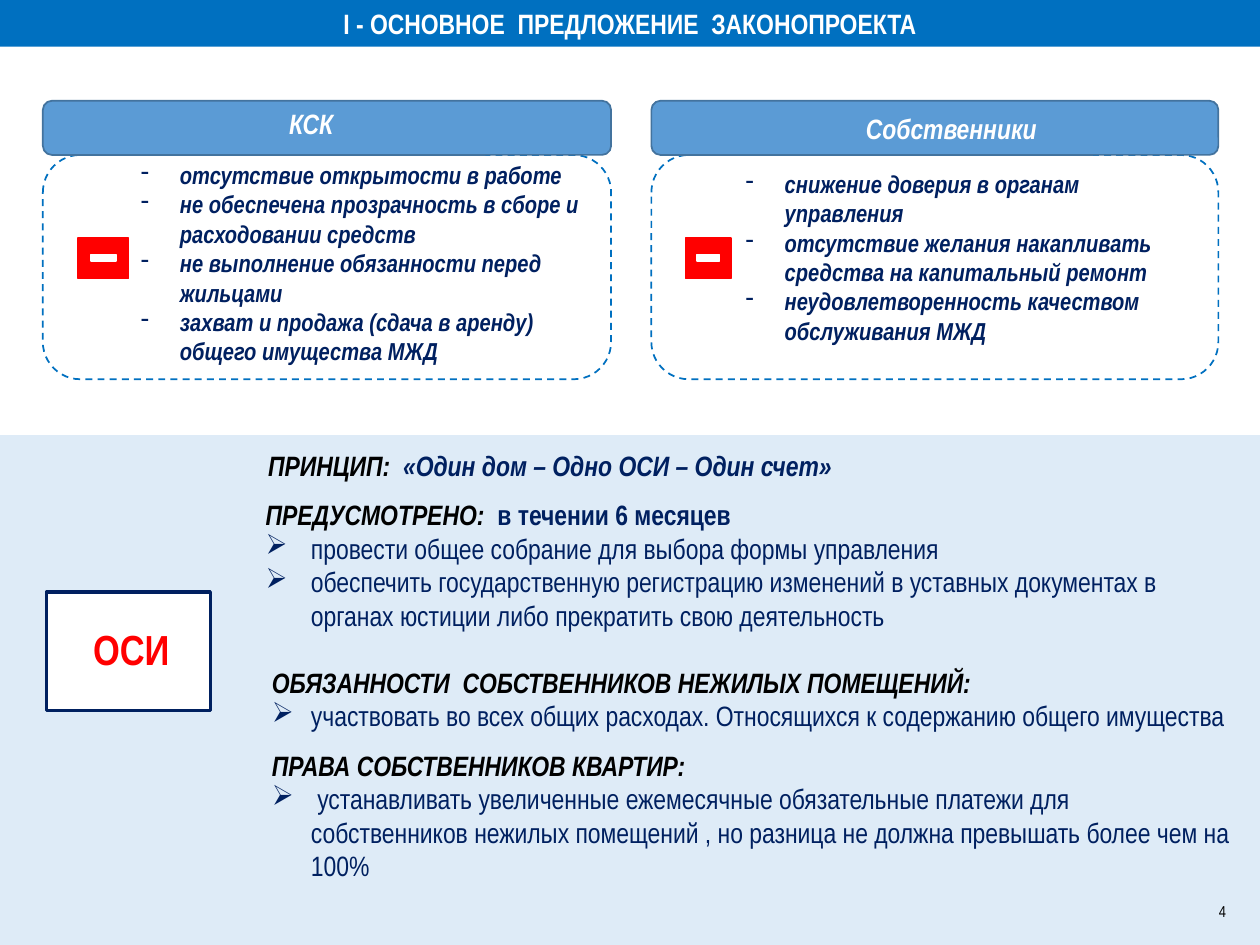
import pptx
import pptx.util
import pptx.dml.color
import pptx.enum.dml
import pptx.enum.shapes
import pptx.enum.text
from lxml import etree

Inches, Pt = pptx.util.Inches, pptx.util.Pt
KIND = pptx.enum.shapes.MSO_SHAPE
ALIGN = pptx.enum.text.PP_ALIGN
HUES = {"blue": "0070C0", "navy": "002060", "pale": "DEEBF7", "head": "5B9BD5",
        "edge": "43739E", "red": "FF0000", "white": "FFFFFF", "black": "000000"}
RGB = {name: pptx.dml.color.RGBColor.from_string(hue) for name, hue in HUES.items()}


def draw(home, kind, box, fill, line=None, width=1):
    """Add a filled shape; no line colour means no outline."""
    shape = home.add_shape(kind, *map(Inches, box))
    shape.shadow.inherit = False
    shape.fill.solid()
    shape.fill.fore_color.rgb = RGB[fill]
    if line:
        shape.line.color.rgb = RGB[line]
        shape.line.width = Pt(width)
    else:
        shape.line.fill.background()
    return shape


def write(frame, paras, align=ALIGN.LEFT):
    """Each paragraph is (runs, bullet, indent, space before)."""
    frame.word_wrap = True
    for n, (runs, mark, indent, gap) in enumerate(paras):
        para = frame.add_paragraph() if n else frame.paragraphs[0]
        para.alignment = align
        para.space_before = Pt(gap)
        if mark:
            props = para._p.get_or_add_pPr()
            props.set("marL", str(Inches(indent)))
            props.set("indent", str(-Inches(indent)))
            bullet = etree.SubElement(props, pptx.oxml.ns.qn("a:buChar"))
            bullet.set("char", mark)
        for text, size, hue, style in runs:
            for row, part in enumerate(text.split("\n")):
                if row:
                    para.add_line_break()
                run = para.add_run()
                run.text = part
                run.font.name = "Arial Narrow"
                run.font.size = Pt(size)
                run.font.color.rgb = RGB[hue]
                run.font.bold = "b" in style
                run.font.italic = "i" in style


deck = pptx.Presentation()
deck.slide_width, deck.slide_height = Inches(10), Inches(7.5)
slide = deck.slides.add_slide(deck.slide_layouts[5])
shapes = slide.shapes

# Title bar
title = shapes.title
title.left, title.top, title.width, title.height = map(Inches, (0, 0, 10, 0.37))
title.fill.solid()
title.fill.fore_color.rgb = RGB["blue"]
title.text_frame.auto_size = pptx.enum.text.MSO_AUTO_SIZE.NONE
write(title.text_frame,
      [([("I - ОСНОВНОЕ  ПРЕДЛОЖЕНИЕ  ЗАКОНОПРОЕКТА", 16, "white", "b")], "", 0, 0)],
      ALIGN.CENTER)

# Lower panel and page number
draw(shapes, KIND.RECTANGLE, (0, 3.46, 10, 4.04), "pale", "pale")
page = draw(shapes, KIND.RECTANGLE, (9.48, 7.03, 0.32, 0.4), "pale").text_frame
page.margin_left = page.margin_right = Inches(0.07)
page.margin_top = page.margin_bottom = Inches(0.04)
write(page, [([("4", 9, "black", "")], "", 0, 0)], ALIGN.RIGHT)

# Two problem cards: left, width, heading box, sign left and width, list box, items
cards = [
    (0.34, 4.51, "КСК", (0.78, 0.8, 3.38, 0.37), 0.62, 0.4, (1.02, 1.22, 3.76, 1.75),
     ["отсутствие открытости в работе",
      "не обеспечена прозрачность в сборе и расходовании средств",
      "не выполнение обязанности перед жильцами",
      "захват и продажа (сдача в аренду) общего имущества МЖД"]),
    (5.17, 4.5, "Собственники", (5.86, 0.84, 3.38, 0.37), 5.44, 0.36, (5.82, 1.29, 3.5, 1.51),
     ["снижение доверия в органам управления",
      "отсутствие желания накапливать средства на капитальный ремонт",
      "неудовлетворенность качеством обслуживания МЖД"]),
]
for left, wide, name, label, spot, span, area, items in cards:
    body = draw(shapes, KIND.ROUNDED_RECTANGLE, (left, 1.23, wide, 1.78), "white", "blue")
    body.line.dash_style = pptx.enum.dml.MSO_LINE.DASH
    draw(shapes, KIND.ROUNDED_RECTANGLE, (left, 0.8, wide, 0.43), "head", "edge")
    head = shapes.add_textbox(*map(Inches, label))
    write(head.text_frame, [([(name, 16, "white", "bi")], "", 0, 0)], ALIGN.CENTER)

    # Minus sign
    sign = shapes.add_group_shape().shapes
    draw(sign, KIND.RECTANGLE, (spot, 1.89, span, 0.32), "red", "red")
    draw(sign, KIND.RECTANGLE, (spot + span / 4, 2.02, span / 2, 0.05), "white", "white")

    points = shapes.add_textbox(*map(Inches, area))
    write(points.text_frame,
          [([(item, 14, "navy", "bi")], "-", 0.31, 0) for item in items])

# Framed label
draw(shapes, KIND.RECTANGLE, (0.37, 4.7, 1.3, 0.94), "white", "navy", 2)
label = shapes.add_textbox(*map(Inches, (0.64, 4.9, 0.83, 0.5)))
write(label.text_frame, [([("ОСИ", 24, "red", "b")], "", 0, 0)])

# Principle, terms, duties and rights
texts = [
    ((2.03, 3.51, 5.98, 0.37), [
        ([("ПРИНЦИП:  ", 16, "black", "bi"),
          ("«Один дом – Одно ОСИ – Один счет»", 16, "navy", "bi")], "", 0, 0)]),
    ((2.01, 3.9, 8.05, 1.45), [
        ([("ПРЕДУСМОТРЕНО:  ", 16, "black", "bi"),
          ("в течении 6 месяцев", 16, "navy", "b")], "", 0, 0),
        ([("провести общее собрание для выбора формы управления", 16, "navy", "")],
         "➢", 0.36, 0),
        ([("обеспечить государственную регистрацию изменений в уставных документах в\n"
           "органах юстиции либо прекратить свою деятельность", 16, "navy", "")],
         "➢", 0.36, 0)]),
    ((2.06, 5.23, 7.82, 2.12), [
        ([("ОБЯЗАННОСТИ  СОБСТВЕННИКОВ НЕЖИЛЫХ ПОМЕЩЕНИЙ:", 16, "black", "bi")], "", 0, 0),
        ([("участвовать во всех общих расходах. Относящихся к содержанию общего имущества",
           16, "navy", "")], "➢", 0.31, 0),
        ([("ПРАВА СОБСТВЕННИКОВ КВАРТИР:", 16, "black", "bi")], "", 0, 9),
        ([(" устанавливать увеличенные ежемесячные обязательные платежи для собственников "
           "нежилых помещений , но разница не должна превышать более чем на 100%",
           16, "navy", "")], "➢", 0.31, 0)]),
]
for box, paras in texts:
    note = shapes.add_textbox(*map(Inches, box))
    write(note.text_frame, paras)

deck.save("out.pptx")
